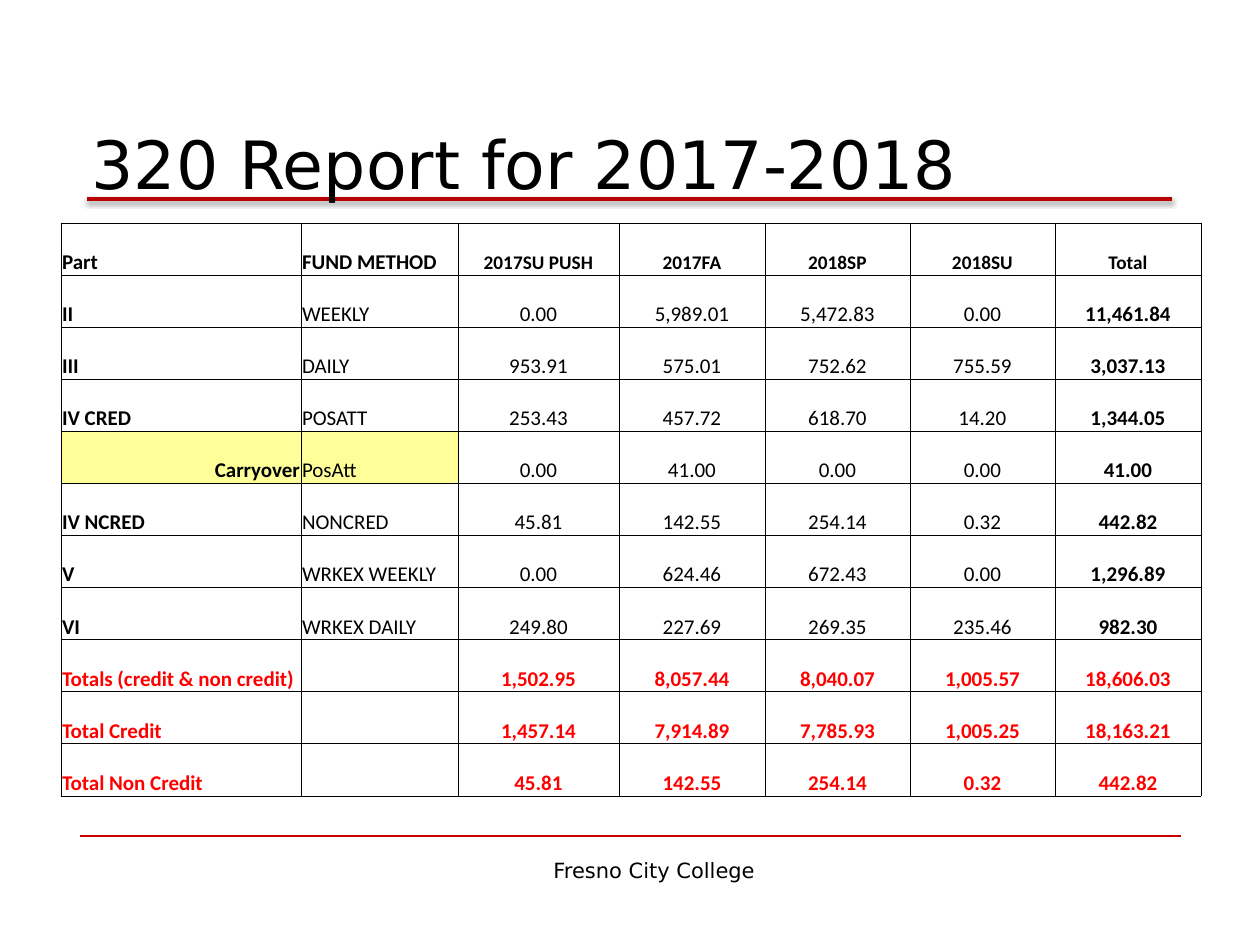
from lxml import etree
from pptx import Presentation
from pptx import util as u
from pptx.dml.color import RGBColor
from pptx.enum import shapes, text
from pptx.oxml import ns

PX = 914400 / 126  # EMU in one px

BLACK = RGBColor(0x00, 0x00, 0x00)
WHITE = RGBColor(0xFF, 0xFF, 0xFF)
RED = RGBColor(0xFF, 0x00, 0x00)
TITLE_RED = RGBColor(0xB9, 0x00, 0x00)
FOOTER_RED = RGBColor(0xCC, 0x00, 0x00)
YELLOW = RGBColor(0xFF, 0xFF, 0x99)

LEFT, CENTER, RIGHT = text.PP_ALIGN.LEFT, text.PP_ALIGN.CENTER, text.PP_ALIGN.RIGHT


def px(*lengths):
    return [u.Emu(round(length * PX)) for length in lengths]


def write(frame, words, size=12, font="Calibri", color=BLACK, bold=False, align=LEFT):
    paragraph = frame.paragraphs[0]
    paragraph.alignment = align
    run = paragraph.add_run()
    run.text = words
    run.font.size = u.Pt(size)
    run.font.name = font
    run.font.bold = bold
    run.font.color.rgb = color


deck = Presentation()
deck.slide_width, deck.slide_height = px(1260, 945)
slide = deck.slides.add_slide(deck.slide_layouts[5])

# Title
title = slide.shapes.title
title.left, title.top, title.width, title.height = px(79, 42, 1103, 167)
title.text_frame.vertical_anchor = text.MSO_ANCHOR.BOTTOM
title.text_frame.auto_size = text.MSO_AUTO_SIZE.NONE
write(title.text_frame, "320 Report for 2017-2018", size=38, font="DejaVu Sans")

# Rules above the footer and under the title, both behind the title text
for left, right, y, color, weight in [(80, 1181, 836, FOOTER_RED, 0.75),
                                      (87, 1172, 199, TITLE_RED, 2)]:
    rule = slide.shapes.add_connector(shapes.MSO_CONNECTOR.STRAIGHT, *px(left, y, right, y))
    rule.line.color.rgb = color
    rule.line.width = u.Pt(weight)
    effects = etree.SubElement(rule._element.spPr, ns.qn("a:effectLst"))
    title._element.addprevious(rule._element)

# Soft shadow of the title rule
shadow = etree.SubElement(effects, ns.qn("a:outerShdw"), blurRad=str(u.Pt(3.1)),
                          dist=str(u.Pt(1.6)), dir="5400000", rotWithShape="0")
shade = etree.SubElement(shadow, ns.qn("a:srgbClr"), val=str(BLACK))
etree.SubElement(shade, ns.qn("a:alpha"), val="38000")

# Footer
footer = slide.shapes.add_textbox(*px(541, 849, 232, 40)).text_frame
footer.word_wrap = False
footer.vertical_anchor = text.MSO_ANCHOR.BOTTOM
write(footer, "Fresno City College", font="DejaVu Sans")

# Report table
REPORT = [
    ["Part", "FUND METHOD", "2017SU PUSH", "2017FA", "2018SP", "2018SU", "Total"],
    ["II", "WEEKLY", "0.00", "5,989.01", "5,472.83", "0.00", "11,461.84"],
    ["III", "DAILY", "953.91", "575.01", "752.62", "755.59", "3,037.13"],
    ["IV CRED", "POSATT", "253.43", "457.72", "618.70", "14.20", "1,344.05"],
    ["Carryover", "PosAtt", "0.00", "41.00", "0.00", "0.00", "41.00"],
    ["IV NCRED", "NONCRED", "45.81", "142.55", "254.14", "0.32", "442.82"],
    ["V", "WRKEX WEEKLY", "0.00", "624.46", "672.43", "0.00", "1,296.89"],
    ["VI", "WRKEX DAILY", "249.80", "227.69", "269.35", "235.46", "982.30"],
    ["Totals (credit & non credit)", "", "1,502.95", "8,057.44", "8,040.07", "1,005.57", "18,606.03"],
    ["Total Credit", "", "1,457.14", "7,914.89", "7,785.93", "1,005.25", "18,163.21"],
    ["Total Non Credit", "", "45.81", "142.55", "254.14", "0.32", "442.82"],
]
COLUMN_WIDTHS = [240, 157, 161, 146, 145, 145, 146]
CARRYOVER_ROW, FIRST_TOTAL_ROW, TOTAL_COLUMN = 4, 8, 6

report = slide.shapes.add_table(len(REPORT), len(COLUMN_WIDTHS),
                                *px(61, 223, sum(COLUMN_WIDTHS), 573)).table
report.first_row = report.horz_banding = False
for column, width in zip(report.columns, px(*COLUMN_WIDTHS)):
    column.width = width

for r, entries in enumerate(REPORT):
    for c, entry in enumerate(entries):
        cell = report.cell(r, c)
        cell.vertical_anchor = text.MSO_ANCHOR.BOTTOM
        cell.margin_left, cell.margin_right, cell.margin_top, cell.margin_bottom = px(1, 1, 1, 0)

        # Borders come before the fill in the cell's XML
        for side in ("lnL", "lnR", "lnT", "lnB"):
            border = etree.SubElement(cell._tc.get_or_add_tcPr(), ns.qn("a:" + side),
                                      w=str(u.Pt(0.5)))
            ink = etree.SubElement(border, ns.qn("a:solidFill"))
            etree.SubElement(ink, ns.qn("a:srgbClr"), val=str(BLACK))
        cell.fill.solid()
        cell.fill.fore_color.rgb = YELLOW if r == CARRYOVER_ROW and c < 2 else WHITE

        if entry:
            is_total = r >= FIRST_TOTAL_ROW
            align = CENTER if c >= 2 else RIGHT if entry == "Carryover" else LEFT
            write(cell.text_frame, entry, size=11 if r == 0 and c >= 2 else 12,
                  color=RED if is_total else BLACK, align=align,
                  bold=r == 0 or is_total or c in (0, TOTAL_COLUMN))

deck.save("out.pptx")
